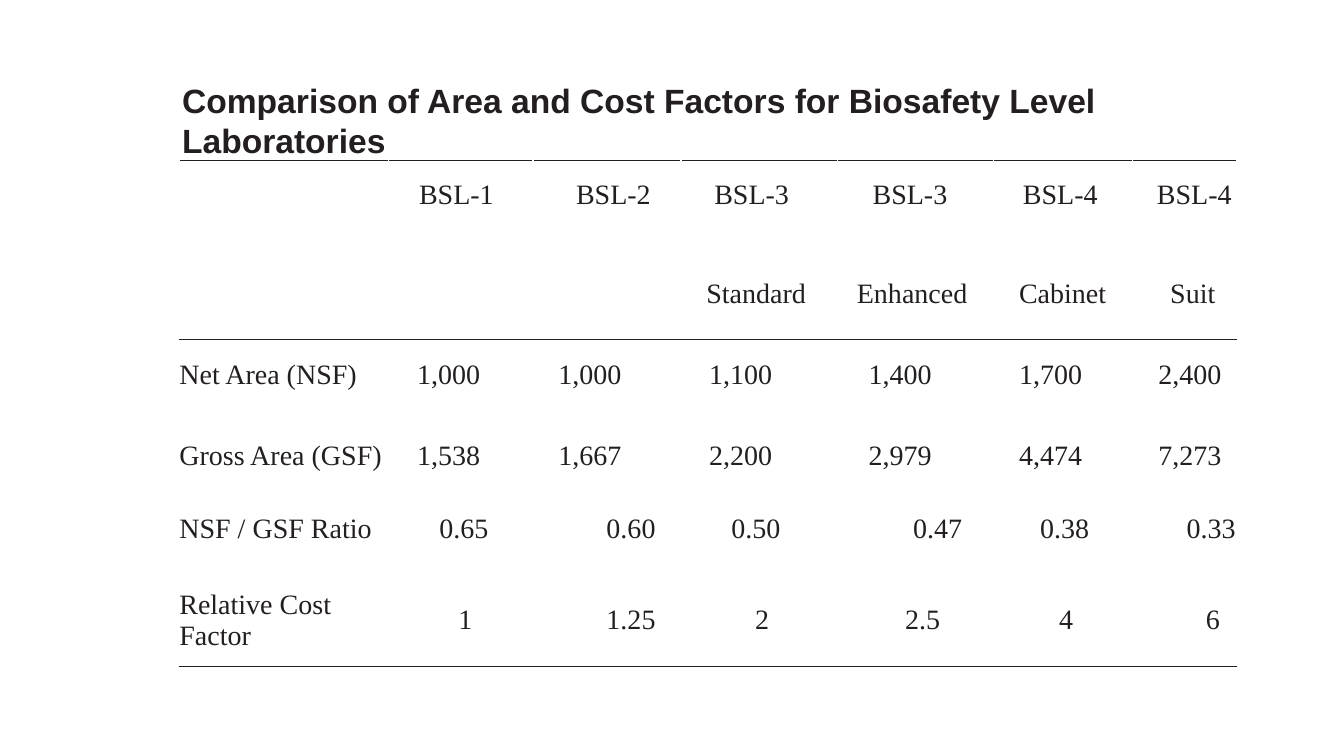
from lxml import etree
from pptx import Presentation
from pptx.dml.color import RGBColor
from pptx.enum.text import MSO_ANCHOR, PP_ALIGN
from pptx.oxml.ns import qn
from pptx.util import Cm, Pt

INK = RGBColor(0x23, 0x1F, 0x20)
LEFT, MID, RIGHT = PP_ALIGN.LEFT, PP_ALIGN.CENTER, PP_ALIGN.RIGHT
TOP, CENTER = MSO_ANCHOR.TOP, MSO_ANCHOR.MIDDLE

TITLE = "Comparison of Area and Cost Factors for Biosafety Level Laboratories"
COLS = [5.28, 3.63, 3.73, 3.94, 3.94, 3.51, 2.62]
ROWS = [2.21, 2.31, 2.24, 1.83, 1.83, 2.34]
DATA = [
    ["", "BSL-1", "BSL-2", "BSL-3", "BSL-3", "BSL-4", "BSL-4"],
    ["", "", "", "Standard", "Enhanced", "Cabinet", "Suit"],
    ["Net Area (NSF)", "1,000", "1,000", "1,100", "1,400", "1,700", "2,400"],
    ["Gross Area (GSF)", "1,538", "1,667", "2,200", "2,979", "4,474", "7,273"],
    ["NSF / GSF Ratio", "0.65", "0.60", "0.50", "0.47", "0.38", "0.33"],
    ["Relative Cost Factor", "1", "1.25", "2", "2.5", "4", "6"],
]

# Alignment, left margin and right margin (cm) of each cell
FLUSH = (LEFT, 0, 0)
AREA = [FLUSH] + [(LEFT, gap, 0) for gap in (0.71, 0.64, 0.71, 0.79, 0.64, 0.64)]
PLACES = [
    [FLUSH, (LEFT, 0.76, 0), (RIGHT, 0, 0.76), (LEFT, 0.84, 0),
     (LEFT, 0.89, 0), (LEFT, 0.74, 0), (RIGHT, 0, 0.13)],
    [FLUSH, FLUSH, FLUSH, (LEFT, 0.64, 0),
     (RIGHT, 0, 0.66), (LEFT, 0.64, 0), (LEFT, 0.94, 0)],
    AREA,
    AREA,
    [FLUSH, (LEFT, 1.27, 0), (RIGHT, 0, 0.64), (LEFT, 1.27, 0),
     (RIGHT, 0, 0.79), (LEFT, 1.17, 0), (RIGHT, 0, 0.03)],
    [FLUSH, (MID, 0.23, 0), (RIGHT, 0, 0.64), (MID, 0.15, 0),
     (MID, 1.3, 0.94), (MID, 0.15, 0), (RIGHT, 0, 0.43)],
]
# Line height (None is single) and space before (pt) of each row
PACE = [(9.7, 2.6), (None, 0.1), (9.8, 2.6), (9.8, 0.2), (9.8, 0.2), (None, 0.2)]
# Ruled sides of each row
RULES = {0: ["lnT"], 1: ["lnB"], 2: ["lnT"], 5: ["lnB"]}


def style(para, face, size, bold=False):
    for run in para.runs:
        font = run.font
        font.name, font.size, font.bold = face, Pt(size), bold
        font.color.rgb = INK


def rule(cell, sides):
    props = cell._tc.get_or_add_tcPr()
    for side in sides:
        line = etree.SubElement(props, qn("a:" + side), w=str(Pt(1)))
        fill = etree.SubElement(line, qn("a:solidFill"))
        etree.SubElement(fill, qn("a:srgbClr"), val=str(INK))


def add_title(slide, left, top, width, height):
    frame = slide.shapes.add_textbox(Cm(left), Cm(top), Cm(width), Cm(height)).text_frame
    frame.word_wrap = True
    frame.vertical_anchor = TOP
    frame.margin_top = Cm(0.23)
    frame.text = TITLE
    style(frame.paragraphs[0], "Arial", 24, True)


def fill_cell(cell, text, place, pace):
    cell.margin_left = cell.margin_right = cell.margin_top = cell.margin_bottom = 0
    cell.vertical_anchor = CENTER
    cell.text = text
    para = cell.text_frame.paragraphs[0]
    para.alignment, start, end = place
    props = para._p.get_or_add_pPr()
    props.set("marL", str(Cm(start)))
    props.set("marR", str(Cm(end)))
    props.set("indent", "0")
    height, before = pace
    if height:
        para.line_spacing = Pt(height)
    para.space_before = Pt(before)
    style(para, "Times New Roman", 20)


def add_grid(slide, left, top, width, height):
    frame = slide.shapes.add_table(len(ROWS), len(COLS), Cm(left), Cm(top), Cm(width), Cm(height))
    table = frame.table
    table.first_row = table.horz_banding = False
    for col, size in zip(table.columns, COLS):
        col.width = Cm(size)
    for row, size in zip(table.rows, ROWS):
        row.height = Cm(size)
    for r, texts in enumerate(DATA):
        for c, text in enumerate(texts):
            cell = table.cell(r, c)
            # The corner cell spans both heading rows
            rule(cell, ["lnT", "lnB"] if (r, c) == (0, 0) else RULES.get(r, []))
            cell.fill.background()
            if text:
                fill_cell(cell, text, PLACES[r][c], PACE[r])
    table.cell(0, 0).merge(table.cell(1, 0))


def main():
    deck = Presentation()
    deck.slide_width, deck.slide_height = Cm(33.87), Cm(19.05)
    slide = deck.slides.add_slide(deck.slide_layouts[6])
    add_title(slide, 4.34, 1.78, 26.8, 3.05)
    add_grid(slide, 4.52, 4.04, sum(COLS), sum(ROWS))
    deck.save("out.pptx")


if __name__ == "__main__":
    main()
